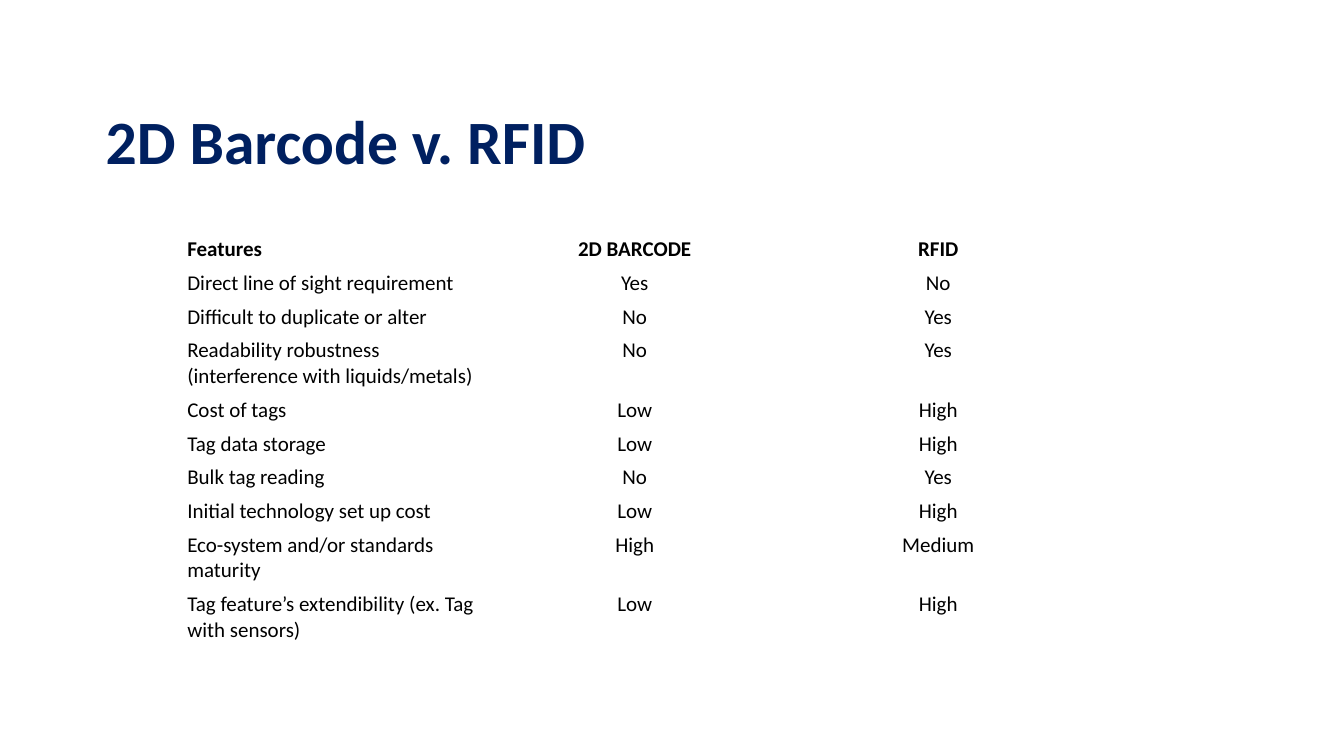
from dataclasses import dataclass

from pptx import Presentation
from pptx.dml.color import RGBColor
from pptx.enum.text import MSO_ANCHOR, PP_ALIGN
from pptx.util import Cm, Pt


@dataclass(frozen=True)
class Theme:
    font: str = "Calibri"
    title_color: RGBColor = RGBColor(0x00, 0x20, 0x60)
    text_color: RGBColor = RGBColor(0x00, 0x00, 0x00)
    title_size: Pt = Pt(44)
    table_size: Pt = Pt(15)


THEME = Theme()
COLUMN_WIDTH = Cm(7.65)
ONE_LINE, TWO_LINES = Cm(0.84), Cm(1.45)

# Row height, then the cell texts
COMPARISON = [
    (ONE_LINE, "Features", "2D BARCODE", "RFID"),
    (ONE_LINE, "Direct line of sight requirement", "Yes", "No"),
    (ONE_LINE, "Difficult to duplicate or alter", "No", "Yes"),
    (TWO_LINES, "Readability robustness (interference with liquids/metals)", "No", "Yes"),
    (ONE_LINE, "Cost of tags", "Low", "High"),
    (ONE_LINE, "Tag data storage", "Low", "High"),
    (ONE_LINE, "Bulk tag reading", "No", "Yes"),
    (ONE_LINE, "Initial technology set up cost", "Low", "High"),
    (TWO_LINES, "Eco-system and/or standards maturity", "High", "Medium"),
    (TWO_LINES, "Tag feature’s extendibility (ex. Tag with sensors)", "Low", "High"),
]


def format_runs(p, size, color, bold):
    for r in p.runs:
        r.font.name = THEME.font
        r.font.size = size
        r.font.bold = bold
        r.font.color.rgb = color


def set_title(s, text):
    title = s.shapes.title
    title.left, title.top = Cm(2.41), Cm(2.67)
    title.width, title.height = Cm(29.21), Cm(2.46)
    tf = title.text_frame
    tf.text = text
    tf.word_wrap = True
    tf.vertical_anchor = MSO_ANCHOR.TOP
    p = tf.paragraphs[0]
    p.alignment = PP_ALIGN.LEFT
    p.line_spacing = 0.9
    format_runs(p, THEME.title_size, THEME.title_color, True)


def fill_cell(cell, text, is_header, is_label):
    cell.fill.background()
    cell.margin_left = cell.margin_right = Cm(0.2)
    cell.margin_top = cell.margin_bottom = Cm(0.1)
    cell.vertical_anchor = MSO_ANCHOR.MIDDLE if is_header else MSO_ANCHOR.TOP
    cell.text_frame.text = text
    p = cell.text_frame.paragraphs[0]
    p.alignment = PP_ALIGN.LEFT if is_label else PP_ALIGN.CENTER
    format_runs(p, THEME.table_size, THEME.text_color, is_header)


def add_comparison_table(s, rows):
    column_count = len(rows[0]) - 1
    height = sum(row[0] for row in rows)
    table = s.shapes.add_table(len(rows), column_count, Cm(4.52), Cm(5.87),
                               COLUMN_WIDTH * column_count, height).table
    table.horz_banding = False
    for column in table.columns:
        column.width = COLUMN_WIDTH
    for i, (row_height, *texts) in enumerate(rows):
        table.rows[i].height = row_height
        for j, text in enumerate(texts):
            fill_cell(table.cell(i, j), text, is_header=i == 0, is_label=j == 0)


def main():
    prs = Presentation()
    prs.slide_width, prs.slide_height = Cm(33.87), Cm(19.05)
    s = prs.slides.add_slide(prs.slide_layouts[5])
    set_title(s, "2D Barcode v. RFID")
    add_comparison_table(s, COMPARISON)
    prs.save("out.pptx")


if __name__ == "__main__":
    main()
